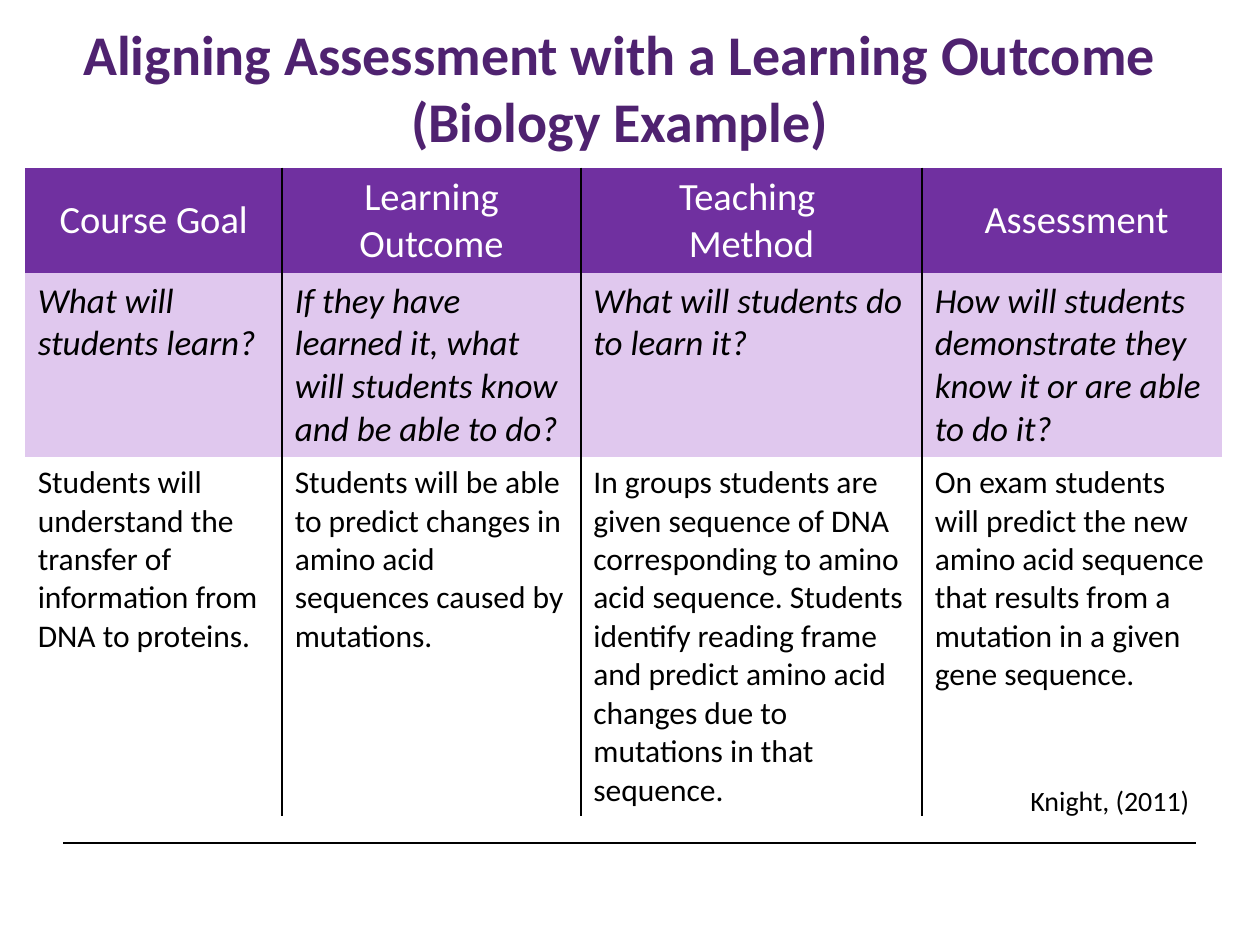
from lxml import etree
from pptx import Presentation
from pptx.dml.color import RGBColor
from pptx.enum.shapes import MSO_CONNECTOR
from pptx.enum.text import MSO_ANCHOR as ANCHOR, PP_ALIGN as ALIGN
from pptx.oxml import parse_xml
from pptx.oxml.ns import nsdecls, qn
from pptx.util import Inches, Pt


def color(hex_string):
    return RGBColor.from_string(hex_string)


def write(frame, text, align, hex_string, **font_format):
    """Fill a text frame, one paragraph per line, in Calibri."""
    frame.word_wrap = True
    frame.text = text
    for paragraph in frame.paragraphs:
        paragraph.alignment = align
        for run in paragraph.runs:
            run.font.name = "Calibri"
            run.font.color.rgb = color(hex_string)
            for name, value in font_format.items():
                setattr(run.font, name, value)


prs = Presentation()
prs.slide_width, prs.slide_height = Inches(10), Inches(7.5)
slide = prs.slides.add_slide(prs.slide_layouts[6])

footer_rule = slide.shapes.add_connector(
    MSO_CONNECTOR.STRAIGHT, Inches(0.5), Inches(6.69), Inches(9.49), Inches(6.69))
footer_rule.line.color.rgb = color("000000")
footer_rule.line.width = Pt(0.75)
etree.SubElement(footer_rule._element.spPr, qn("a:effectLst"))

title = slide.shapes.add_textbox(Inches(0.42), Inches(0.25), Inches(9), Inches(0.87))
title.text_frame.vertical_anchor = ANCHOR.MIDDLE
write(title.text_frame, "Aligning Assessment with a Learning Outcome (Biology Example)",
      ALIGN.CENTER, "4F2270", size=Pt(32), bold=True)

# Each column: header, guiding question, biology example
alignment_steps = [
    (2.04, "Course Goal", "What will students learn?",
     "Students will understand the transfer of information from DNA to proteins."),
    (2.37, "Learning Outcome",
     "If they have learned it, what will students know and be able to do?",
     "Students will be able to predict changes in amino acid sequences caused by mutations."),
    (2.71, "Teaching \nMethod", "What will students do to learn it?",
     "In groups students are given sequence of DNA corresponding to amino acid sequence. "
     "Students identify reading frame and predict amino acid changes due to mutations in "
     "that sequence."),
    (2.38, " Assessment", "How will students demonstrate they know it or are able to do it?",
     "On exam students will predict the new amino acid sequence that results from a "
     "mutation in a given gene sequence."),
]
# Each row: height, fill, anchor, alignment, text colour, font format
row_styles = [
    (0.84, "7030A0", ANCHOR.MIDDLE, ALIGN.CENTER, "FFFFFF", dict(size=Pt(22), bold=False)),
    (1.46, "E0C8EE", ANCHOR.TOP, ALIGN.LEFT, "000000", dict(size=Pt(20), italic=True)),
    (2.85, "FFFFFF", ANCHOR.TOP, ALIGN.LEFT, "000000", dict(size=Pt(18))),
]
BLACK_FILL = '<a:solidFill><a:srgbClr val="000000"/></a:solidFill>'

steps_table = slide.shapes.add_table(
    len(row_styles), len(alignment_steps),
    Inches(0.2), Inches(1.33), Inches(9.5), Inches(5.15)).table
last_column = len(alignment_steps) - 1

for row, (height, fill, anchor, align, text_color, font_format) in enumerate(row_styles):
    steps_table.rows[row].height = Inches(height)
    for column, (width, *texts) in enumerate(alignment_steps):
        steps_table.columns[column].width = Inches(width)
        cell = steps_table.cell(row, column)
        cell.fill.solid()
        cell.fill.fore_color.rgb = color(fill)
        cell.vertical_anchor = anchor
        write(cell.text_frame, texts[row], align, text_color, **font_format)

        # Only the lines between columns are drawn
        drawn_edges = {"lnL": column > 0, "lnR": column < last_column,
                       "lnT": False, "lnB": False}
        for position, (edge, drawn) in enumerate(drawn_edges.items()):
            edge_fill = BLACK_FILL if drawn else "<a:noFill/>"
            cell._tc.get_or_add_tcPr().insert(position, parse_xml(
                f'<a:{edge} {nsdecls("a")} w="{Pt(1)}">{edge_fill}</a:{edge}>'))

citation = slide.shapes.add_textbox(Inches(8.08), Inches(6.17), Inches(1.67), Inches(0.37))
write(citation.text_frame, "Knight, (2011)", ALIGN.LEFT, "000000", size=Pt(16))

prs.save("out.pptx")
